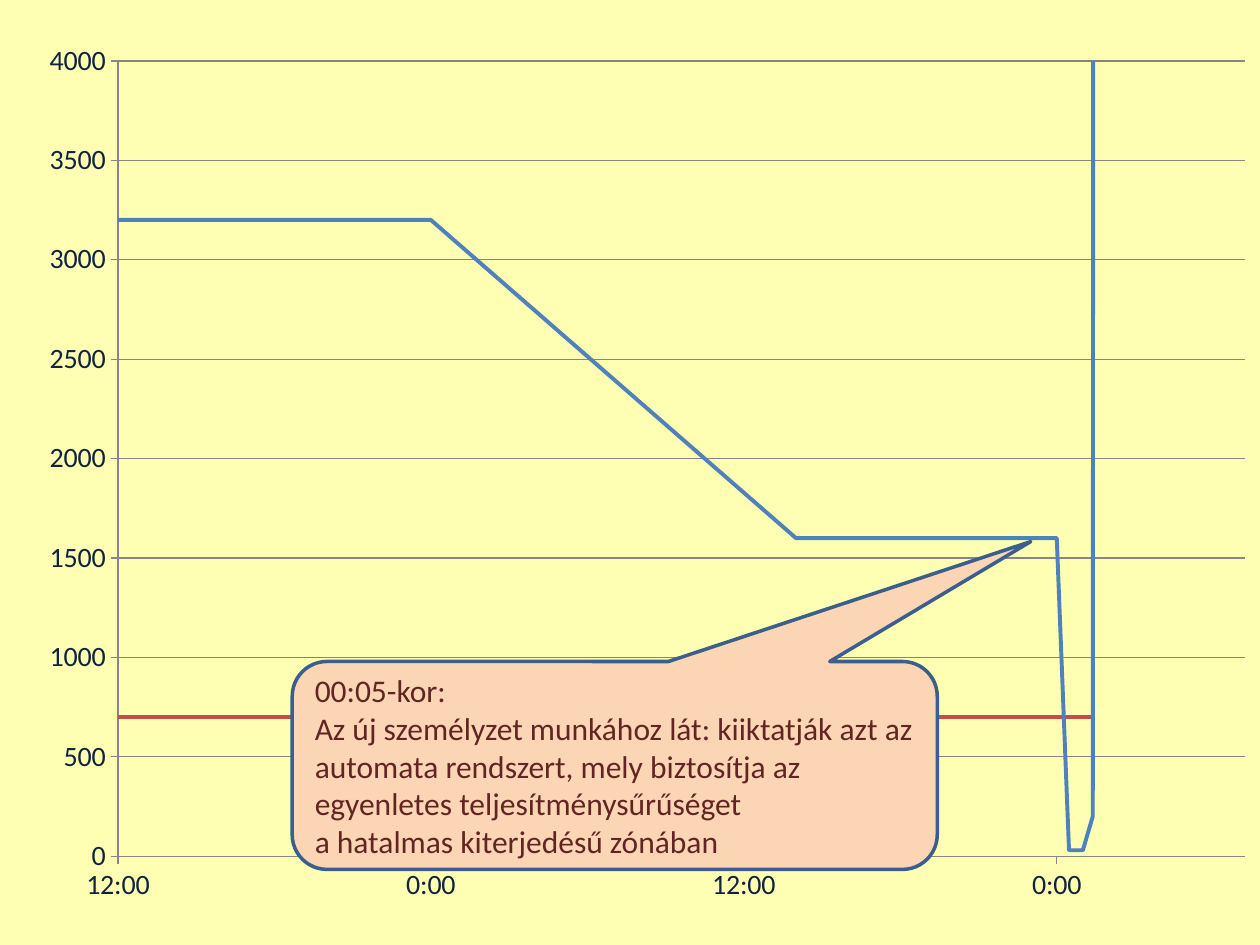
from lxml import etree
from pptx import Presentation
from pptx.chart.data import XyChartData
from pptx.dml.color import RGBColor
from pptx.enum.chart import XL_AXIS_CROSSES, XL_CHART_TYPE, XL_TICK_LABEL_POSITION, XL_TICK_MARK
from pptx.enum.shapes import MSO_SHAPE
from pptx.enum.text import MSO_ANCHOR, PP_ALIGN
from pptx.util import Pt

SCATTER = XL_CHART_TYPE.XY_SCATTER_LINES_NO_MARKERS
MINIMUM = XL_AXIS_CROSSES.MINIMUM
LOW = XL_TICK_LABEL_POSITION.LOW
OUTSIDE, NO_TICK = XL_TICK_MARK.OUTSIDE, XL_TICK_MARK.NONE
CALLOUT = MSO_SHAPE.ROUNDED_RECTANGULAR_CALLOUT
MIDDLE, LEFT = MSO_ANCHOR.MIDDLE, PP_ALIGN.LEFT

# Content: hours run from noon of the first day
START_DAY = 31526.5
HOURS = [0, 12, 26, 35.17, 36, 36.47, 37, 37.38, 37.4]
SERIES = [
    ("Series 1", [3200, 3200, 1600, 1600, 1600, 30, 30, 200, 5000], "4F81BD"),
    ("Series 2", [700] * len(HOURS), "C0504D"),
]
NOTE = [
    "00:05-kor:",
    "Az új személyzet munkához lát: kiiktatják azt az automata rendszert, "
    "mely biztosítja az egyenletes teljesítménysűrűséget",
    "a hatalmas kiterjedésű zónában",
]

# Format values
TIME_AXIS = {"minimum_scale": START_DAY, "maximum_scale": START_DAY + 1.8, "major_unit": 0.5,
             "has_major_gridlines": False, "tick_label_position": LOW}
POWER_AXIS = {"minimum_scale": 0, "maximum_scale": 4000, "major_unit": 500,
              "has_major_gridlines": True, "crosses": MINIMUM}
TICKS = {"major_tick_mark": OUTSIDE, "minor_tick_mark": NO_TICK}
AXIS_FONT = {"name": "Calibri", "size": Pt(16)}
NOTE_FONT = {"name": "Calibri", "size": Pt(18)}
PLOT_LAYOUT = {"x": 0.0745, "y": 0.0385, "w": 0.905, "h": 0.888}
CHART_FRAME = (14.4, 15.1, 711.4, 511.9)
NOTE_FRAME = (167, 378, 368.6, 118.8)
NOTE_ADJUSTMENTS = (0.645, -1.077, 0.167)
GRID_COLOUR = "868686"


def colour(value):
    return RGBColor.from_string(value)


def set_values(target, values):
    for name, value in values.items():
        setattr(target, name, value)


def set_line(line, value, width):
    line.color.rgb = colour(value)
    line.width = Pt(width)


def set_font(font, values, value):
    set_values(font, values)
    font.color.rgb = colour(value)


def fix_plot_area(chart):
    """Pin the inner plot area to fractions of the chart frame."""
    area = chart._chartSpace.chart.plotArea
    namespace = etree.QName(area).namespace
    for old in area.findall(f"{{{namespace}}}layout"):
        area.remove(old)
    layout = area.makeelement(f"{{{namespace}}}layout")
    area.insert(0, layout)
    manual = etree.SubElement(layout, f"{{{namespace}}}manualLayout")
    settings = {"layoutTarget": "inner", "xMode": "edge", "yMode": "edge", **PLOT_LAYOUT}
    for tag, value in settings.items():
        etree.SubElement(manual, f"{{{namespace}}}{tag}").set("val", str(value))


def add_power_chart(page):
    data = XyChartData()
    for name, values, _ in SERIES:
        series = data.add_series(name)
        for hour, value in zip(HOURS, values):
            series.add_data_point(round(START_DAY + hour / 24, 4), value)
    chart = page.shapes.add_chart(SCATTER, *map(Pt, CHART_FRAME), data).chart
    set_values(chart, {"has_legend": False, "has_title": False})
    set_font(chart.font, {"name": "Calibri", "size": Pt(10)}, "000000")
    chart.plots[0].vary_by_categories = False

    for series, (_, _, shade) in zip(chart.plots[0].series, SERIES):
        series.smooth = False
        set_line(series.format.line, shade, 2.25)

    for axis, values in ((chart.category_axis, TIME_AXIS), (chart.value_axis, POWER_AXIS)):
        set_values(axis, {**values, **TICKS})
        set_line(axis.format.line, GRID_COLOUR, 0.75)
        set_font(axis.tick_labels.font, AXIS_FONT, "0F243E")
    set_line(chart.value_axis.major_gridlines.format.line, GRID_COLOUR, 0.75)
    set_values(chart.category_axis.tick_labels,
               {"number_format": "h:mm;@", "number_format_is_linked": False})
    fix_plot_area(chart)


def add_note(page):
    box = page.shapes.add_shape(CALLOUT, *map(Pt, NOTE_FRAME))
    box.shadow.inherit = False
    for index, value in enumerate(NOTE_ADJUSTMENTS):
        box.adjustments[index] = value
    box.fill.solid()
    box.fill.fore_color.rgb = colour("FCD5B5")
    set_line(box.line, "3A5F8C", 2)
    frame = box.text_frame
    set_values(frame, {"word_wrap": True, "vertical_anchor": MIDDLE})
    for index, text in enumerate(NOTE):
        para = frame.add_paragraph() if index else frame.paragraphs[0]
        para.alignment = LEFT
        span = para.add_run()
        span.text = text
        set_font(span.font, NOTE_FONT, "632523")


def main():
    deck = Presentation()
    set_values(deck, {"slide_width": Pt(720), "slide_height": Pt(540)})
    page = deck.slides.add_slide(deck.slide_layouts[6])
    page.background.fill.solid()
    page.background.fill.fore_color.rgb = colour("FFFFB3")
    add_power_chart(page)
    add_note(page)
    deck.save("out.pptx")


if __name__ == "__main__":
    main()
